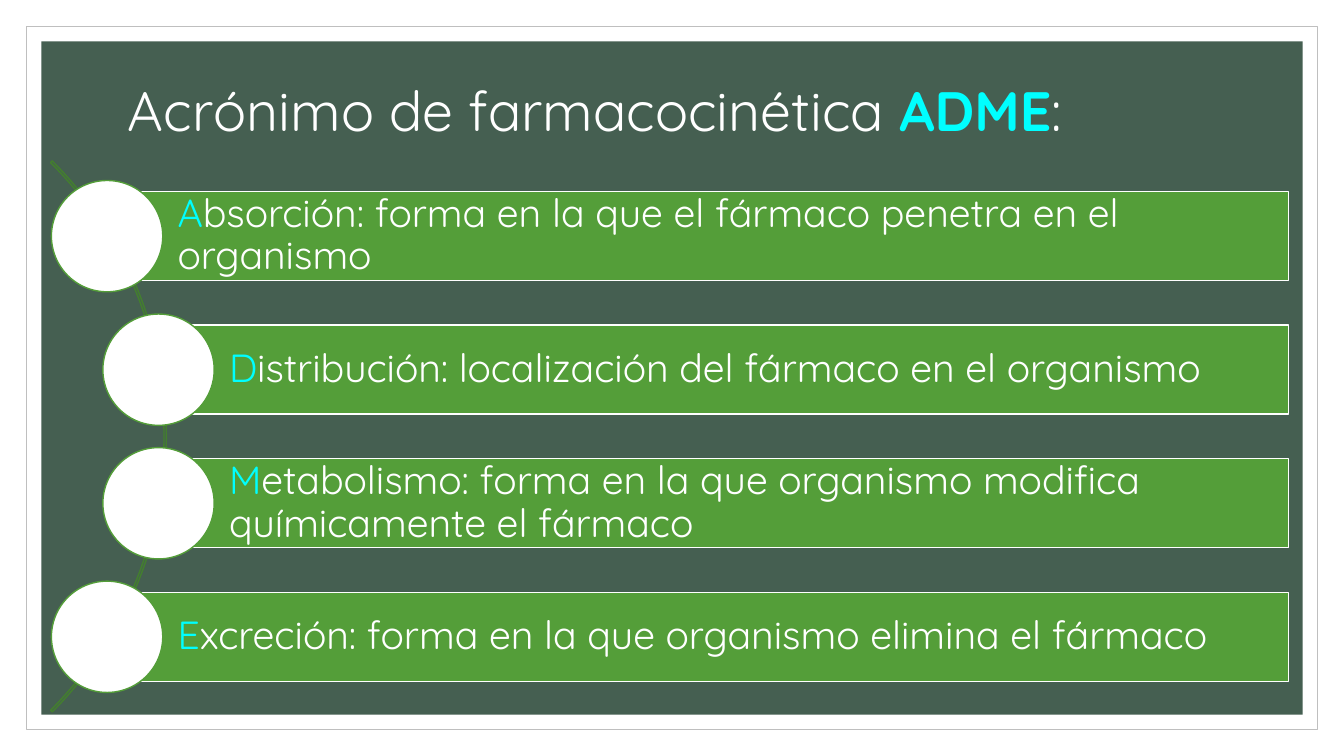
from collections import namedtuple

from pptx import Presentation
from pptx.dml.color import RGBColor
from pptx.enum.shapes import MSO_SHAPE
from pptx.enum.text import MSO_ANCHOR, PP_ALIGN
from pptx.util import Inches, Pt

RECTANGLE, OVAL, BLOCK_ARC = MSO_SHAPE.RECTANGLE, MSO_SHAPE.OVAL, MSO_SHAPE.BLOCK_ARC
TOP, MIDDLE = MSO_ANCHOR.TOP, MSO_ANCHOR.MIDDLE
LEFT = PP_ALIGN.LEFT

WHITE = RGBColor(0xFF, 0xFF, 0xFF)
FRAME_GRAY = RGBColor(0xBF, 0xBF, 0xBF)
BOARD_GREEN = RGBColor(0x45, 0x5F, 0x51)
BAR_GREEN = RGBColor(0x54, 0x9E, 0x39)
ARC_GREEN = RGBColor(0x43, 0x7F, 0x2E)
CYAN = RGBColor(0x00, 0xFF, 0xFF)
FONT = "Quicksand"

Box = namedtuple("Box", "left top width height")
PAGE = Box(0, 0, 13.33, 7.5)

STEPS = [
    ("A", "bsorción: forma en la que el fármaco penetra en el organismo"),
    ("D", "istribución: localización del fármaco en el organismo"),
    ("M", "etabolismo: forma en la que organismo modifica químicamente el fármaco"),
    ("E", "xcreción: forma en la que organismo elimina el fármaco"),
]


def inset(box, margin):
    return Box(box.left + margin, box.top + margin,
               box.width - 2 * margin, box.height - 2 * margin)


def add_shape(page, kind, box, fill=None, line=None, weight=1):
    shape = page.shapes.add_shape(kind, *(Inches(length) for length in box))
    shape.shadow.inherit = False
    if fill is None:
        shape.fill.background()
    else:
        shape.fill.solid()
        shape.fill.fore_color.rgb = fill
    if line is None:
        shape.line.fill.background()
    else:
        shape.line.color.rgb = line
        shape.line.width = Pt(weight)
    return shape


def write_text(shape, spans, size, anchor=MIDDLE, margins=(0.1, 0.05, 0.1, 0.05)):
    """Each span is (text, colour, bold); margins run left, top, right, bottom."""
    frame = shape.text_frame
    frame.word_wrap = True
    frame.vertical_anchor = anchor
    (frame.margin_left, frame.margin_top,
     frame.margin_right, frame.margin_bottom) = (Inches(margin) for margin in margins)
    para = frame.paragraphs[0]
    para.alignment = LEFT
    para.line_spacing = 0.9
    for text, color, bold in spans:
        span = para.add_run()
        span.text = text
        span.font.name = FONT
        span.font.size = Pt(size)
        span.font.bold = bold
        span.font.color.rgb = color


def add_board(page, box):
    add_shape(page, RECTANGLE, inset(box, 0.26), WHITE, FRAME_GRAY, 0.5)
    add_shape(page, RECTANGLE, inset(box, 0.41), BOARD_GREEN)


def add_title(page, box):
    title = page.shapes.add_textbox(*(Inches(length) for length in box))
    write_text(title, [("Acrónimo de farmacocinética ", WHITE, False),
                       ("ADME", CYAN, True), (":", WHITE, False)],
               39.6, TOP, (0.1, 0.13, 0.1, 0.05))


def add_steps(page, box):
    pitch = box.height / len(STEPS)
    bar_height = pitch * 2 / 3
    disc = bar_height * 1.25
    middle = box.top + box.height / 2

    # Arc behind the discs: a quarter circle bulging to the right
    diameter = 7.73
    arc = add_shape(page, BLOCK_ARC,
                    Box(box.left + 1.14 - diameter, middle - diameter / 2,
                        diameter, diameter), line=ARC_GREEN)
    for index, value in enumerate((189, 27, 0.003)):
        arc.adjustments[index] = value

    # Bars, each with a disc centred on its left end
    for row, (initial, rest) in enumerate(STEPS):
        center = box.top + (row + 0.5) * pitch
        shift = 0 if row in (0, len(STEPS) - 1) else 0.51
        left = box.left + disc / 2 + shift
        bar = add_shape(page, RECTANGLE,
                        Box(left, center - bar_height / 2,
                            box.left + box.width - left, bar_height),
                        BAR_GREEN, WHITE)
        write_text(bar, [(initial, CYAN, False), (rest, WHITE, False)],
                   28, margins=(0.7, 0.08, 0.08, 0.08))
        add_shape(page, OVAL, Box(left - disc / 2, center - disc / 2, disc, disc),
                  WHITE, BAR_GREEN)


def main():
    deck = Presentation()
    deck.slide_width, deck.slide_height = Inches(PAGE.width), Inches(PAGE.height)
    page = deck.slides.add_slide(deck.slide_layouts[6])
    add_board(page, PAGE)
    add_title(page, Box(1.17, 0.7, 11, 1))
    add_steps(page, Box(0.51, 1.68, 12.27, 5.3))
    deck.save("out.pptx")


if __name__ == "__main__":
    main()
